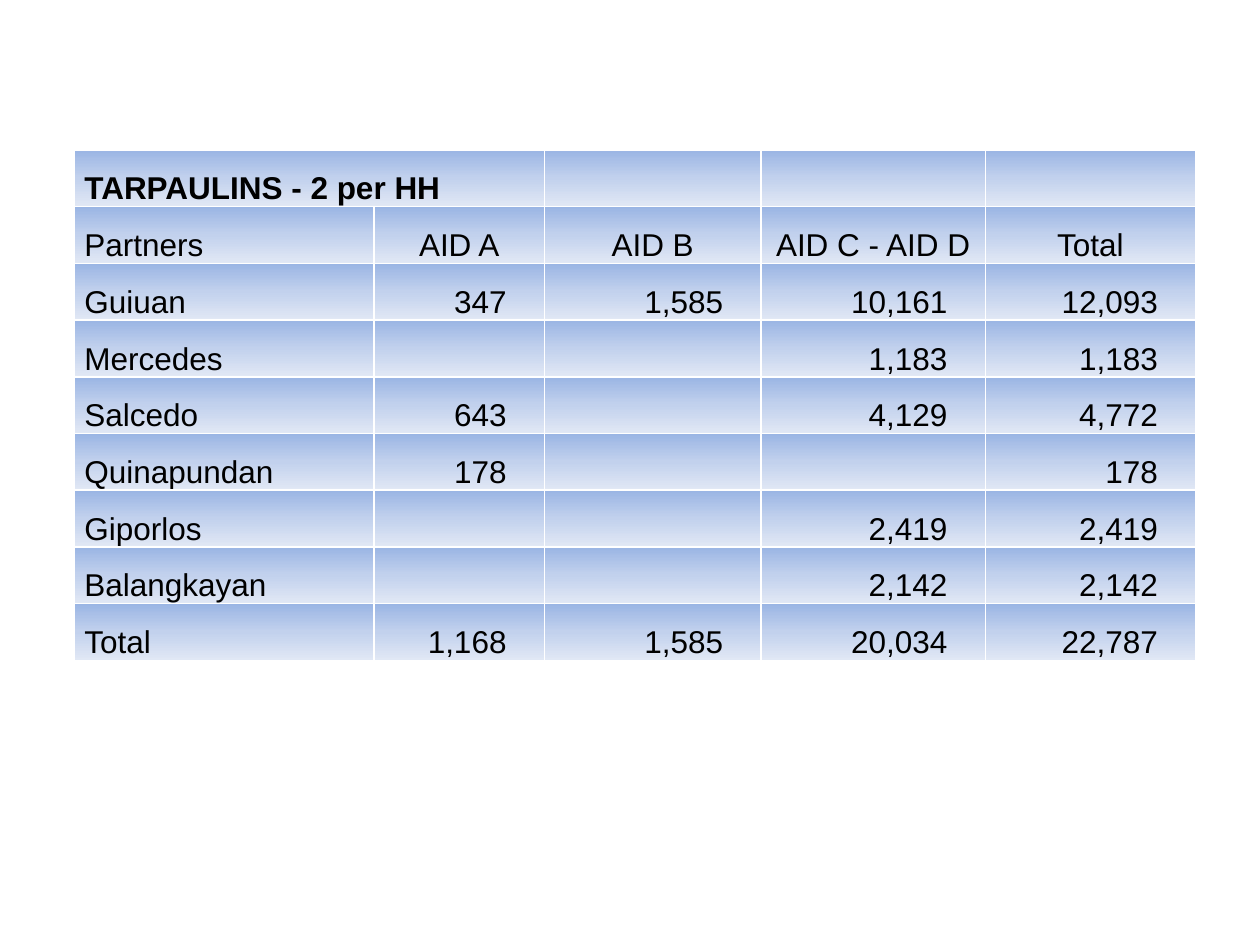
from dataclasses import dataclass
from typing import Optional

from lxml.etree import SubElement
from pptx import Presentation
from pptx.dml.color import RGBColor
from pptx.enum.text import MSO_ANCHOR, PP_ALIGN
from pptx.oxml.ns import qn
from pptx.util import Inches, Pt


@dataclass(frozen=True)
class Theme:
    font: str = "Arial"
    size: int = 18
    text: str = "000000"
    border: str = "FFFFFF"
    border_width: int = 1
    gradient: tuple = ((0, "9AB5E4"), (50, "C2D1ED"), (100, "E1E8F5"))


@dataclass(frozen=True)
class Municipality:
    name: str
    supplied: tuple[Optional[int], ...]


THEME = Theme()
TITLE = "TARPAULINS - 2 per HH"
HEADER = ("Partners", "AID A", "AID B", "AID C - AID D", "Total")
MUNICIPALITIES = (
    Municipality("Guiuan", (347, 1585, 10161)),
    Municipality("Mercedes", (None, None, 1183)),
    Municipality("Salcedo", (643, None, 4129)),
    Municipality("Quinapundan", (178, None, None)),
    Municipality("Giporlos", (None, None, 2419)),
    Municipality("Balangkayan", (None, None, 2142)),
)
COL_WIDTHS = (2.38, 1.35, 1.72, 1.78, 1.67)
ROW_HEIGHT = 0.45
LEFT, TOP = 0.59, 1.19
EDGE, LABEL_INDENT, NUMBER_INDENT = 0.01, 0.08, 0.3


def add_solid_fill(parent, color: str) -> None:
    SubElement(SubElement(parent, qn("a:solidFill")), qn("a:srgbClr"), val=color)


def paint_cell(cell) -> None:
    """Give the cell its borders and vertical gradient, in schema order."""
    tc_pr = cell._tc.get_or_add_tcPr()
    for side in ("lnL", "lnR", "lnT", "lnB"):
        ln = SubElement(tc_pr, qn(f"a:{side}"), w=str(Pt(THEME.border_width)))
        add_solid_fill(ln, THEME.border)
    grad = SubElement(tc_pr, qn("a:gradFill"), rotWithShape="1")
    stops = SubElement(grad, qn("a:gsLst"))
    for percent, color in THEME.gradient:
        gs = SubElement(stops, qn("a:gs"), pos=str(percent * 1000))
        SubElement(gs, qn("a:srgbClr"), val=color)
    SubElement(grad, qn("a:lin"), ang="5400000", scaled="0")


def fill_cell(cell, text: str, align: PP_ALIGN, bold: bool) -> None:
    cell.vertical_anchor = MSO_ANCHOR.BOTTOM
    cell.margin_left = Inches(LABEL_INDENT if align == PP_ALIGN.LEFT else EDGE)
    cell.margin_right = Inches(NUMBER_INDENT if align == PP_ALIGN.RIGHT else EDGE)
    cell.margin_top, cell.margin_bottom = Inches(EDGE), 0
    paint_cell(cell)
    p = cell.text_frame.paragraphs[0]
    p.alignment = align
    p.font.name, p.font.size, p.font.bold = THEME.font, Pt(THEME.size), bold
    p.font.color.rgb = RGBColor.from_string(THEME.text)
    if text:
        p.add_run().text = text


def number_row(name: str, values: tuple[Optional[int], ...]) -> tuple[str, ...]:
    """Format one row and append its sum."""
    total = sum(v or 0 for v in values)
    return (name, *(f"{v:,}" if v else "" for v in (*values, total)))


def table_rows() -> list[tuple[str, ...]]:
    by_partner = zip(*(m.supplied for m in MUNICIPALITIES))
    totals = tuple(sum(v or 0 for v in column) for column in by_partner)
    return [
        (TITLE, "", "", "", ""),
        HEADER,
        *(number_row(m.name, m.supplied) for m in MUNICIPALITIES),
        number_row("Total", totals),
    ]


def cell_alignment(row: int, col: int) -> PP_ALIGN:
    if col == 0:
        return PP_ALIGN.LEFT
    return PP_ALIGN.CENTER if row == 1 else PP_ALIGN.RIGHT


def add_supply_table(slide) -> None:
    rows = table_rows()
    table = slide.shapes.add_table(
        len(rows), len(COL_WIDTHS), Inches(LEFT), Inches(TOP),
        Inches(sum(COL_WIDTHS)), Inches(ROW_HEIGHT * len(rows)),
    ).table
    table.first_row = table.horz_banding = False
    for column, width in zip(table.columns, COL_WIDTHS):
        column.width = Inches(width)
    for r, texts in enumerate(rows):
        table.rows[r].height = Inches(ROW_HEIGHT)
        for c, text in enumerate(texts):
            fill_cell(table.cell(r, c), text, cell_alignment(r, c), bold=r == 0)
    table.cell(0, 0).merge(table.cell(0, 1))


def main() -> None:
    prs = Presentation()
    prs.slide_width, prs.slide_height = Inches(10), Inches(7.5)
    add_supply_table(prs.slides.add_slide(prs.slide_layouts[6]))
    prs.save("out.pptx")


if __name__ == "__main__":
    main()
